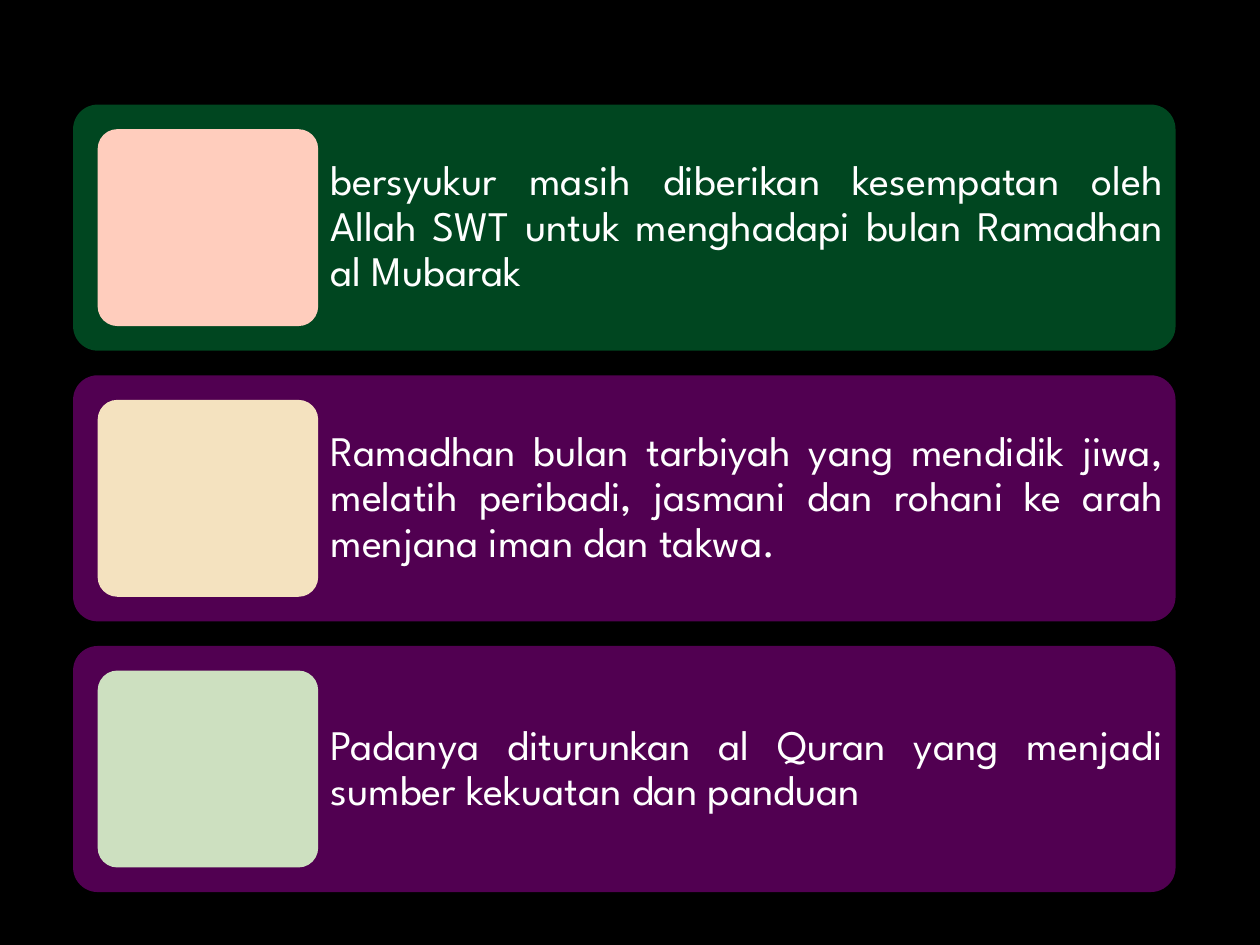
from lxml.etree import SubElement
from pptx import Presentation
from pptx.dml.color import RGBColor
from pptx.enum.shapes import MSO_SHAPE
from pptx.enum.text import MSO_ANCHOR, PP_ALIGN
from pptx.oxml.ns import qn
from pptx.util import Inches, Pt

COLORS = {
    "background": "000000",
    "text": "FFFFFF",
    "green": "00B050",
    "purple": "CC00CC",
    "pink": "FFCDBD",
    "cream": "F4E2BF",
    "mint": "CDE0C0",
}
FONT = "League Spartan"
CARDS = [
    ("green", "pink", "bersyukur masih diberikan kesempatan oleh Allah SWT "
     "untuk menghadapi bulan Ramadhan al Mubarak"),
    ("purple", "cream", "Ramadhan bulan tarbiyah yang mendidik jiwa, melatih "
     "peribadi, jasmani dan rohani ke arah menjana iman dan takwa."),
    ("purple", "mint", "Padanya diturunkan al Quran yang menjadi sumber "
     "kekuatan dan panduan"),
]


def color(name):
    """Return the named palette colour."""
    return RGBColor.from_string(COLORS[name])


def add_panel(shapes, left, top, width, height, fill, opacity=100):
    """Add a rounded panel, see-through when opacity is below 100 percent."""
    panel = shapes.add_shape(MSO_SHAPE.ROUNDED_RECTANGLE, Inches(left),
                             Inches(top), Inches(width), Inches(height))
    panel.adjustments[0] = 0.1
    panel.shadow.inherit = False
    panel.line.fill.background()
    panel.fill.solid()
    panel.fill.fore_color.rgb = color(fill)
    if opacity < 100:
        tint = panel.fill._xPr.find(qn("a:solidFill"))[0]
        SubElement(tint, qn("a:alpha"), val=str(opacity * 1000))


def add_message(shapes, left, top, width, height, text):
    """Add a justified, vertically centred message."""
    box = shapes.add_textbox(Inches(left), Inches(top),
                             Inches(width), Inches(height))
    frame = box.text_frame
    frame.word_wrap = True
    frame.vertical_anchor = MSO_ANCHOR.MIDDLE
    frame.margin_left = frame.margin_right = Inches(0.1)
    frame.margin_top = frame.margin_bottom = Inches(0.1)
    para = frame.paragraphs[0]
    para.alignment = PP_ALIGN.JUSTIFY
    para.line_spacing = 0.9
    span = para.add_run()
    span.text = text
    span.font.name = FONT
    span.font.size = Pt(24)
    span.font.color.rgb = color("text")


def add_card(page, left, top, width, height, fill, tile_fill, text):
    """Add a card with a coloured tile on the left and a message beside it."""
    inset = height / 10
    tile_width = width / 5
    text_left = left + inset + tile_width
    card = page.shapes.add_group_shape().shapes
    add_panel(card, left, top, width, height, fill, opacity=40)
    add_message(card, text_left, top, left + width - text_left, height, text)
    add_panel(card, left + inset, top + inset, tile_width,
              height - 2 * inset, tile_fill)


def add_card_list(page, left, top, width, height):
    """Stack the cards evenly, with gaps of a tenth of a card's height."""
    card_height = height / (len(CARDS) + 0.1 * (len(CARDS) - 1))
    for index, card in enumerate(CARDS):
        add_card(page, left, top + index * 1.1 * card_height,
                 width, card_height, *card)


def main():
    """Build and save the deck."""
    deck = Presentation()
    deck.slide_width = Inches(10)
    deck.slide_height = Inches(7.5)
    page = deck.slides.add_slide(deck.slide_layouts[6])
    page.background.fill.solid()
    page.background.fill.fore_color.rgb = color("background")
    add_card_list(page, 0.58, 0.83, 8.75, 6.25)
    deck.save("out.pptx")


if __name__ == "__main__":
    main()
